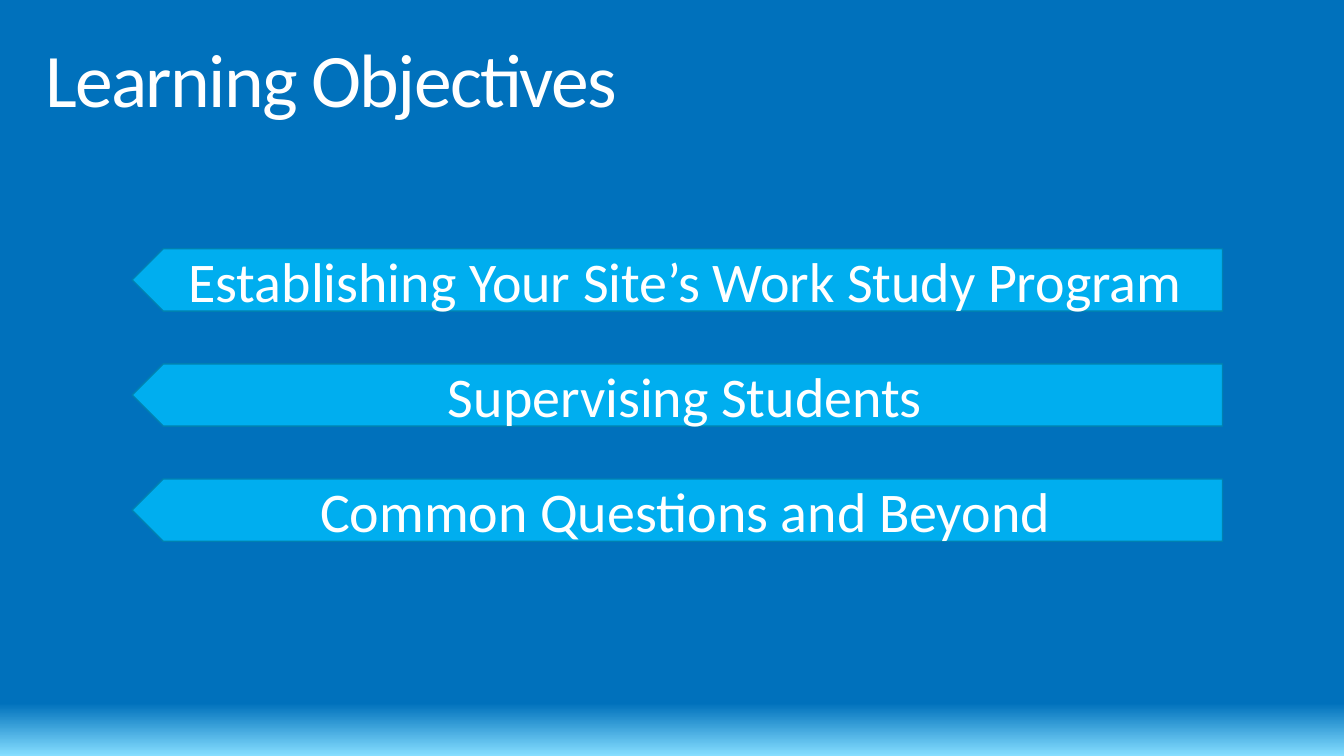
"""Build the Learning Objectives slide."""
from pptx import Presentation
from pptx import util as u
from pptx.dml.color import RGBColor
from pptx.enum import shapes, text

COLORS = {
    "deep": "0071BC",
    "glow": "85DEFF",
    "banner": "00AEEF",
    "edge": "0081B1",
    "text": "FFFFFF",
}
OBJECTIVES = [
    "Establishing Your Site’s Work Study Program",
    "Supervising Students",
    "Common Questions and Beyond",
]
FIRST_TOP, STEP = 6.27, 2.9


def color(key):
    """Return the named colour."""
    return RGBColor.from_string(COLORS[key])


def paint_background(slide):
    """Fill the slide with blue that lightens at the bottom edge."""
    fill = slide.background.fill
    fill.gradient()
    fill.gradient_angle = 270
    for stop, position, key in zip(fill.gradient_stops, (0.93, 1), ("deep", "glow")):
        stop.position = position
        stop.color.rgb = color(key)


def write(shape, words, size, align):
    """Put one styled line of text in the middle of a shape."""
    frame = shape.text_frame
    frame.text = words
    frame.word_wrap = True
    frame.vertical_anchor = text.MSO_ANCHOR.MIDDLE
    line = frame.paragraphs[0]
    line.alignment = align
    font = line.runs[0].font
    font.name = "Calibri"
    font.size = u.Pt(size)
    font.color.rgb = color("text")
    return line


def add_heading(slide, words):
    """Add the slide heading with tight letter spacing."""
    heading = slide.shapes.add_textbox(u.Cm(0.89), u.Cm(0.36), u.Cm(29.41), u.Cm(3.51))
    line = write(heading, words, 54, text.PP_ALIGN.LEFT)
    line.line_spacing = 0.85
    line.runs[0].font._element.set("spc", "-120")


def add_objective(slide, words, top):
    """Add a banner that points left."""
    banner = slide.shapes.add_shape(
        shapes.MSO_SHAPE.PENTAGON, u.Cm(3.33), u.Cm(top), u.Cm(27.48), u.Cm(1.57))
    banner._element.spPr.xfrm.set("flipH", "1")
    banner.shadow.inherit = False
    banner.fill.solid()
    banner.fill.fore_color.rgb = color("banner")
    banner.line.color.rgb = color("edge")
    banner.line.width = u.Pt(1)
    write(banner, words, 40, text.PP_ALIGN.CENTER)


def main():
    """Create and save the presentation."""
    deck = Presentation()
    deck.slide_width, deck.slide_height = u.Cm(33.87), u.Cm(19.05)
    slide = deck.slides.add_slide(deck.slide_layouts[6])
    paint_background(slide)
    add_heading(slide, "Learning Objectives")
    for row, objective in enumerate(OBJECTIVES):
        add_objective(slide, objective, FIRST_TOP + row * STEP)
    deck.save("out.pptx")


if __name__ == "__main__":
    main()
